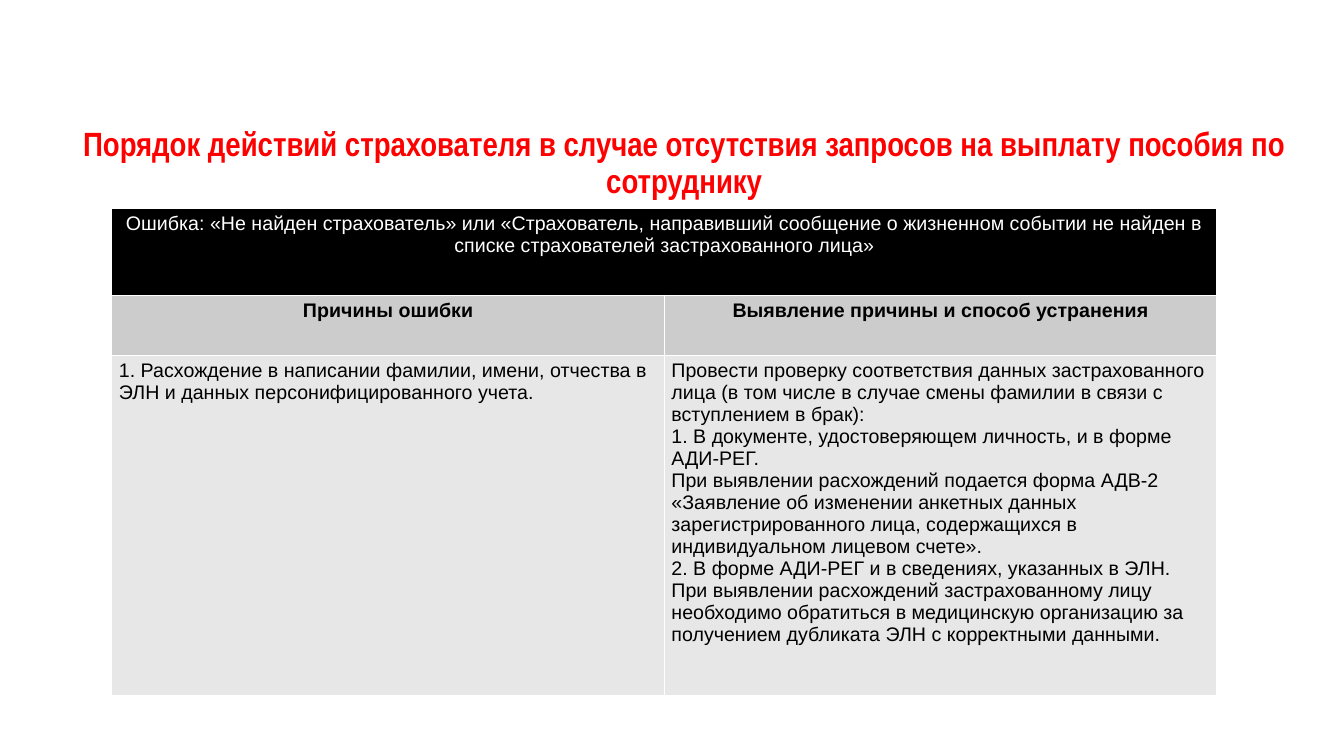
from pptx import Presentation
from pptx.dml.color import RGBColor as RGB
from pptx.enum.text import MSO_ANCHOR as Anchor, PP_ALIGN as Align
from pptx.oxml.ns import qn
from pptx.util import Inches, Pt
from lxml.etree import SubElement as Sub

# Content
TITLE = "Порядок действий страхователя в случае отсутствия запросов на выплату пособия по сотруднику"
ROWS = [
    [["Ошибка: «Не найден страхователь» или «Страхователь, направивший сообщение "
      "о жизненном событии не найден в списке страхователей застрахованного лица»"], []],
    [["Причины ошибки"], ["Выявление причины и способ устранения"]],
    [["1. Расхождение в написании фамилии, имени, отчества в ЭЛН и данных "
      "персонифицированного учета."],
     ["Провести проверку соответствия данных застрахованного лица (в том числе "
      "в случае смены фамилии в связи с вступлением в брак):",
      "1. В документе, удостоверяющем личность, и в форме АДИ-РЕГ.",
      "При выявлении расхождений подается форма АДВ-2 «Заявление об изменении анкетных "
      "данных зарегистрированного лица, содержащихся в индивидуальном лицевом счете».",
      "2. В форме АДИ-РЕГ и в сведениях, указанных в ЭЛН.",
      "При выявлении расхождений застрахованному лицу необходимо обратиться в медицинскую "
      "организацию за получением дубликата ЭЛН с корректными данными."]],
]

# Formats
HEX = {"red": "FF0000", "white": "FFFFFF", "black": "000000",
       "gray": "CCCCCC", "pale": "E7E7E7"}
HEAD = {"name": "Arial Narrow", "size": Pt(24), "bold": True}
BASE = {"name": "Arial", "size": Pt(14)}
# Row height, fill, text colour, bold, alignment
LOOKS = [(0.86, "black", "white", False, Align.CENTER),
         (0.6, "gray", "black", True, Align.CENTER),
         (3.37, "pale", "black", False, Align.LEFT)]
COLS = 2
WIDE = 5.48
PADS = {"margin_left": 0.07, "margin_right": 0.07,
        "margin_top": 0.04, "margin_bottom": 0.04}


def write(para, text, style, hue, align):
    para.alignment = align
    run = para.add_run()
    run.text = text
    for key, val in style.items():
        setattr(run.font, key, val)
    run.font.color.rgb = RGB.from_string(HEX[hue])


def edge(cell):
    props = cell._tc.get_or_add_tcPr()
    for side in "LRTB":
        line = Sub(props, qn(f"a:ln{side}"), w=str(Pt(1)))
        Sub(Sub(line, qn("a:solidFill")), qn("a:srgbClr"), val=HEX["white"])


prs = Presentation()
prs.slide_width, prs.slide_height = Inches(13.33), Inches(7.5)
slide = prs.slides.add_slide(prs.slide_layouts[6])

# Title
box = slide.shapes.add_textbox(*map(Inches, (0.24, 1.22, 13.09, 1.33)))
frame = box.text_frame
frame.word_wrap = True
frame.vertical_anchor = Anchor.TOP
para = frame.paragraphs[0]
para.line_spacing = 0.9
write(para, TITLE, HEAD, "red", Align.CENTER)

# Table
high = sum(look[0] for look in LOOKS)
area = map(Inches, (1.11, 2.07, COLS * WIDE, high))
table = slide.shapes.add_table(len(ROWS), COLS, *area).table
for col in table.columns:
    col.width = Inches(WIDE)
table.cell(0, 0).merge(table.cell(0, COLS - 1))

for r, (row, look) in enumerate(zip(ROWS, LOOKS)):
    tall, fill, hue, bold, align = look
    table.rows[r].height = Inches(tall)
    for c, lines in enumerate(row):
        cell = table.cell(r, c)
        edge(cell)
        cell.fill.solid()
        cell.fill.fore_color.rgb = RGB.from_string(HEX[fill])
        for key, val in PADS.items():
            setattr(cell, key, Inches(val))
        frame = cell.text_frame
        for i, text in enumerate(lines):
            para = frame.add_paragraph() if i else frame.paragraphs[0]
            write(para, text, {**BASE, "bold": bold}, hue, align)

prs.save("out.pptx")
